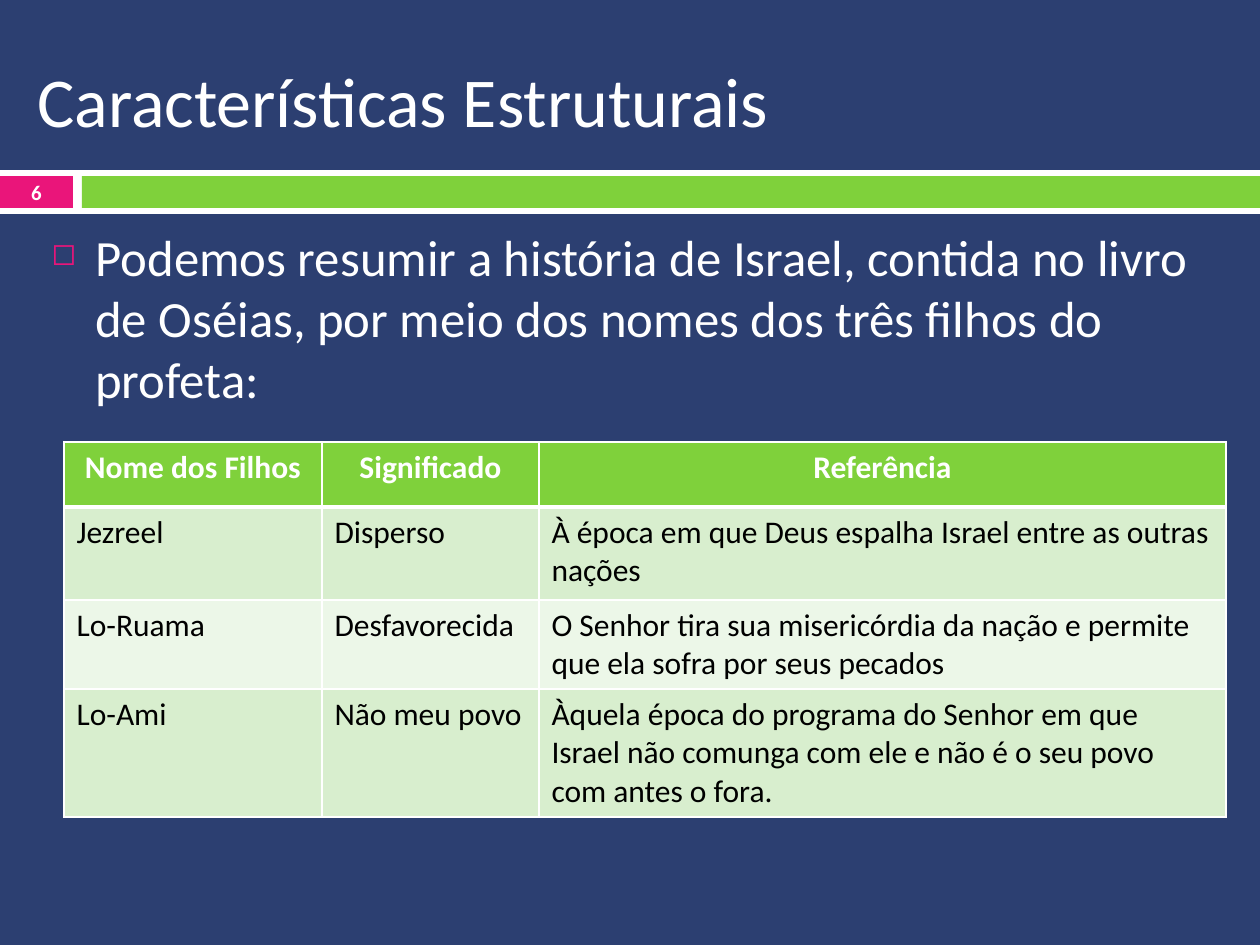
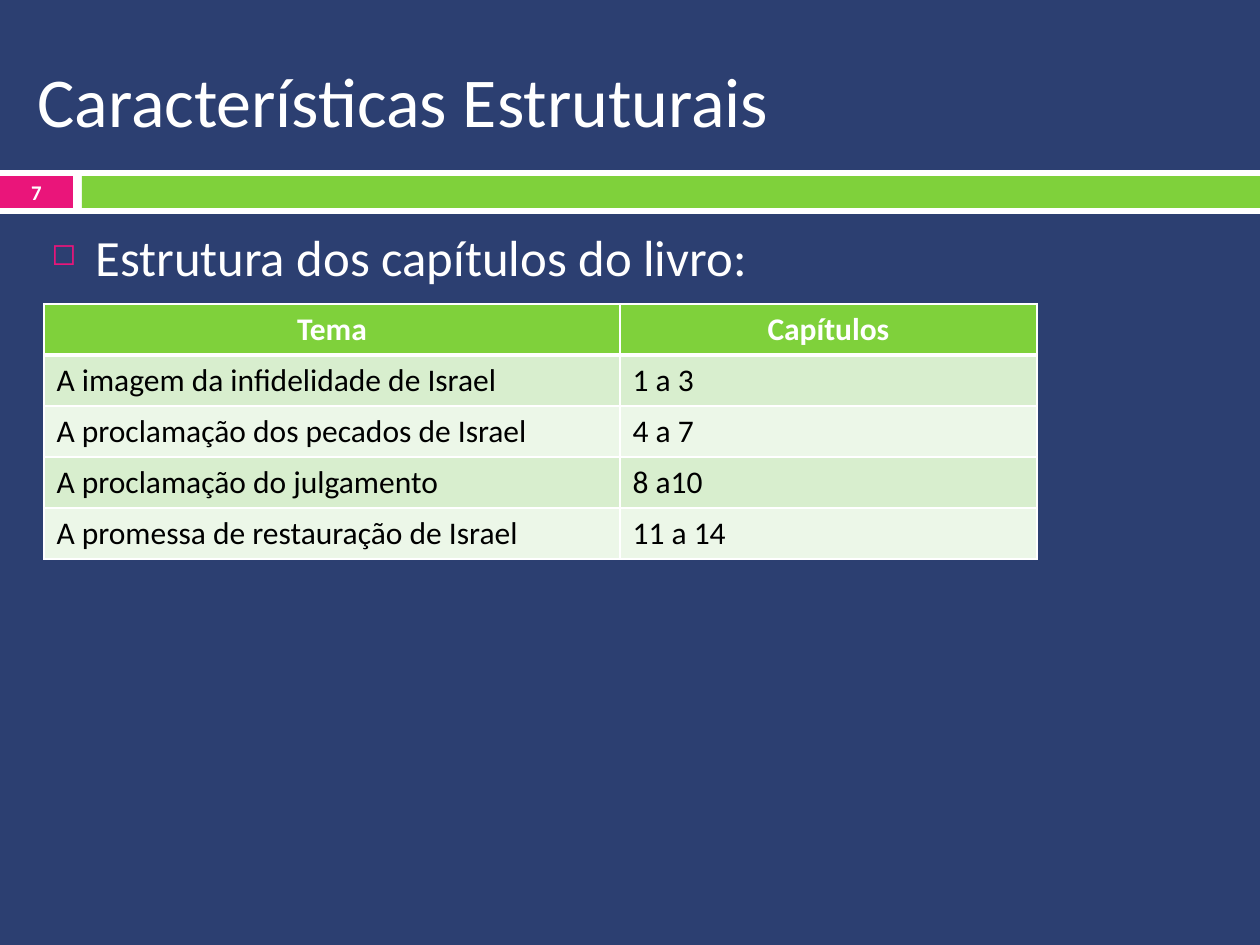
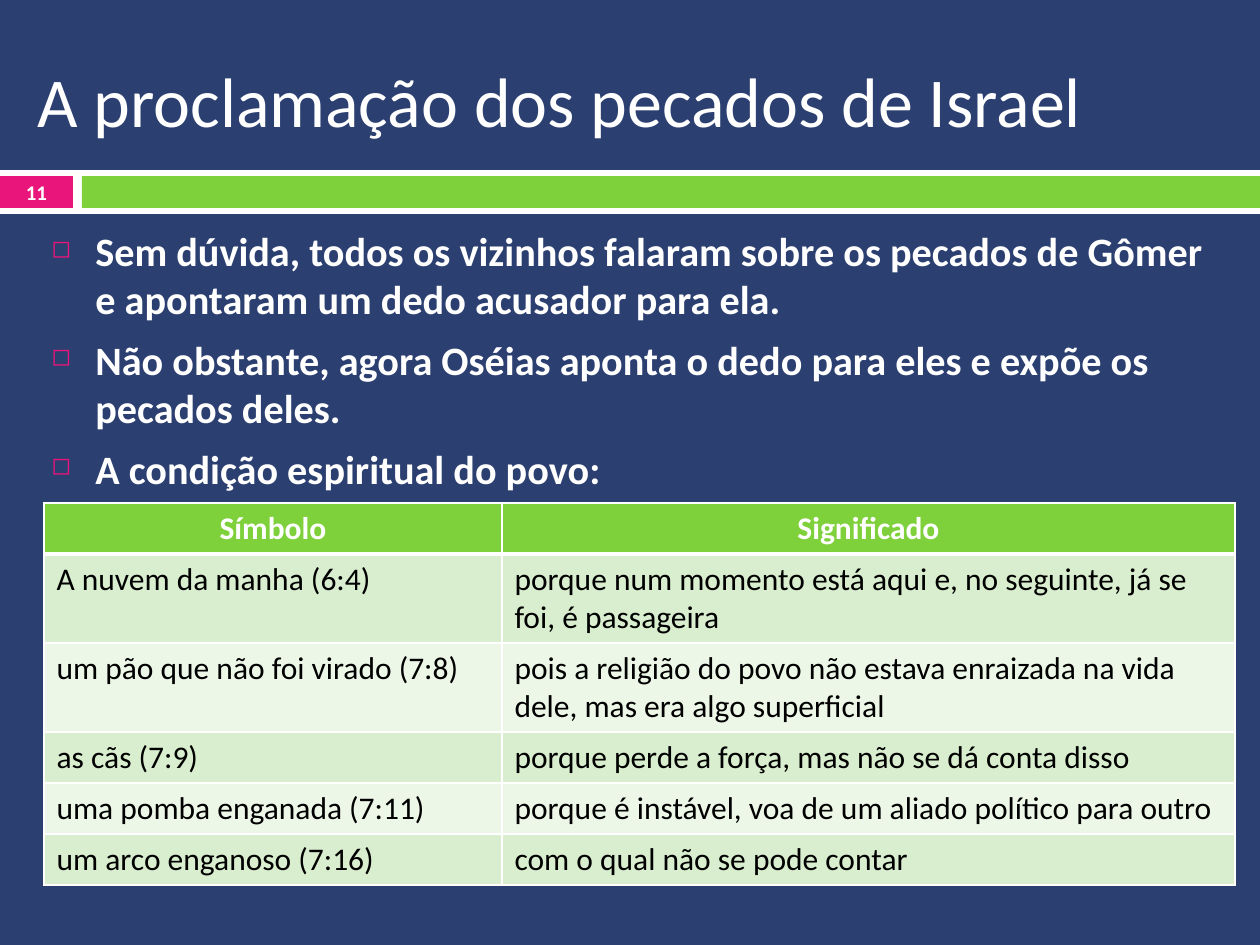
from lxml import etree
from pptx import Presentation
from pptx.dml.color import RGBColor
from pptx.enum.shapes import MSO_SHAPE
from pptx.enum.text import MSO_ANCHOR, PP_ALIGN
from pptx.oxml.ns import qn
from pptx.util import Pt

RECT = MSO_SHAPE.RECTANGLE
MIDDLE = MSO_ANCHOR.MIDDLE
TOP = MSO_ANCHOR.TOP
LEFT = PP_ALIGN.LEFT
CENTER = PP_ALIGN.CENTER

FONT = "Calibri"
COLORS = {
    "navy": "2C3F71",
    "white": "FFFFFF",
    "black": "000000",
    "pink": "EA157A",
    "green": "7FD13B",
    "band_dark": "D8EECE",
    "band_light": "ECF7E8",
}

# Layout, in px at 126 to the inch
EMU_PER_PX = 914400 / 126
SLIDE_W, SLIDE_H = 1260, 945
BAR_TOP, BAR_H = 176, 32
NUMBER_W = 73
INDENT = 44
ROW_H = {1: 51, 2: 89, 3: 128}  # table row height by number of text lines


def px(n):
    return int(n * EMU_PER_PX)


def rgb(name):
    return RGBColor.from_string(COLORS[name])


# Text
def style(p, size, color, bold=False, align=LEFT):
    p.alignment = align
    for r in p.runs:
        r.font.name = FONT
        r.font.size = Pt(size)
        r.font.bold = bold
        r.font.color.rgb = rgb(color)


def add_text(slide, box, text, size, bold=False, align=LEFT, anchor=TOP):
    sp = slide.shapes.add_textbox(*map(px, box))
    tf = sp.text_frame
    tf.word_wrap = True
    tf.vertical_anchor = anchor
    tf.text = text
    for p in tf.paragraphs:
        style(p, size, "white", bold, align)
    return tf


def add_bullet(p):
    p.space_before = Pt(7)
    pPr = p._p.get_or_add_pPr()
    pPr.set("marL", str(px(INDENT)))
    pPr.set("indent", str(-px(INDENT)))
    clr = etree.SubElement(pPr, qn("a:buClr"))
    etree.SubElement(clr, qn("a:srgbClr"), val=COLORS["pink"])
    etree.SubElement(pPr, qn("a:buSzPct"), val="60000")
    etree.SubElement(pPr, qn("a:buChar"), char="◻")


def add_bullets(slide, lines, size, bold=False):
    tf = add_text(slide, (39, 220, 1182, 698), "\n".join(lines), size, bold)
    for p in tf.paragraphs:
        add_bullet(p)


# Slide frame: background, bands, title and number
def add_band(slide, box, color):
    sp = slide.shapes.add_shape(RECT, *map(px, box))
    sp.shadow.inherit = False
    sp.fill.solid()
    sp.fill.fore_color.rgb = rgb(color)
    sp.line.fill.background()


def add_base_slide(prs, title, number):
    slide = prs.slides.add_slide(prs.slide_layouts[6])
    bg = slide.background.fill
    bg.solid()
    bg.fore_color.rgb = rgb("navy")
    add_band(slide, (0, 170, SLIDE_W, 44), "white")
    add_band(slide, (0, BAR_TOP, NUMBER_W, BAR_H), "pink")
    add_band(slide, (82, BAR_TOP, SLIDE_W - 82, BAR_H), "green")
    add_text(slide, (25, 32, 1201, 136), title, 40, anchor=MIDDLE)
    tf = add_text(slide, (0, 175, NUMBER_W, 34), str(number), 11.9,
                  bold=True, align=CENTER, anchor=MIDDLE)
    tf.margin_top = tf.margin_bottom = 0
    return slide


# Tables
def set_borders(cell, top, bottom):
    tcPr = cell._tc.get_or_add_tcPr()
    for side, width in (("L", 1), ("R", 1), ("T", top), ("B", bottom)):
        ln = etree.SubElement(tcPr, qn(f"a:ln{side}"), w=str(Pt(width)))
        fill = etree.SubElement(ln, qn("a:solidFill"))
        etree.SubElement(fill, qn("a:srgbClr"), val=COLORS["white"])


def fill_cell(cell, text, row):
    header = row == 0
    set_borders(cell, 3 if row == 1 else 1, 3 if header else 1)
    band = "green" if header else ("band_light", "band_dark")[row % 2]
    cell.fill.solid()
    cell.fill.fore_color.rgb = rgb(band)
    cell.text_frame.text = text
    for p in cell.text_frame.paragraphs:
        if header:
            style(p, 18, "white", True, CENTER)
        else:
            style(p, 18, "black")


def add_grid(slide, left, top, widths, heights, rows):
    frame = slide.shapes.add_table(len(rows), len(widths), px(left), px(top),
                                   px(sum(widths)), px(sum(heights)))
    table = frame.table
    for col, width in zip(table.columns, widths):
        col.width = px(width)
    for i, (height, texts) in enumerate(zip(heights, rows)):
        table.rows[i].height = px(height)
        for j, text in enumerate(texts):
            fill_cell(table.cell(i, j), text, i)


# Slides
def add_children_slide(prs):
    slide = add_base_slide(prs, "Características Estruturais", 6)
    add_bullets(slide, [
        "Podemos resumir a história de Israel, contida no livro de Oséias, "
        "por meio dos nomes dos três filhos do profeta:"], 29)
    add_grid(slide, 64, 442, (258, 217, 687), (65, 93, ROW_H[2], ROW_H[3]), [
        ("Nome dos Filhos", "Significado", "Referência"),
        ("Jezreel", "Disperso",
         "À época em que Deus espalha Israel entre as outras\nnações"),
        ("Lo-Ruama", "Desfavorecida",
         "O Senhor tira sua misericórdia da nação e permite que ela sofra "
         "por seus pecados"),
        ("Lo-Ami", "Não meu povo",
         "Àquela época do programa do Senhor em que Israel não comunga com "
         "ele e não é o seu povo com antes o fora."),
    ])


def add_chapters_slide(prs):
    slide = add_base_slide(prs, "Características Estruturais", 7)
    add_bullets(slide, ["Estrutura dos capítulos do livro:"], 29)
    add_grid(slide, 44, 304, (576, 417), [ROW_H[1]] * 5, [
        ("Tema", "Capítulos"),
        ("A imagem da infidelidade de Israel", "1 a 3"),
        ("A proclamação dos pecados de Israel", "4 a 7"),
        ("A proclamação do julgamento", "8 a10"),
        ("A promessa de restauração de Israel", "11 a 14"),
    ])


def add_sins_slide(prs):
    slide = add_base_slide(prs, "A proclamação dos pecados de Israel", 11)
    add_bullets(slide, [
        "Sem dúvida, todos os vizinhos falaram sobre os pecados de Gômer e "
        "apontaram um dedo acusador para ela.",
        "Não obstante, agora Oséias aponta o dedo para eles e expõe os "
        "pecados deles.",
        "A condição espiritual do povo:"], 23, bold=True)
    heights = [ROW_H[n] for n in (1, 2, 2, 1, 1, 1)]
    add_grid(slide, 44, 503, (458, 733), heights, [
        ("Símbolo", "Significado"),
        ("A nuvem da manha (6:4)",
         "porque num momento está aqui e, no seguinte, já se foi, "
         "é passageira"),
        ("um pão que não foi virado (7:8)",
         "pois a religião do povo não estava enraizada na vida dele, "
         "mas era algo superficial"),
        ("as cãs (7:9)", "porque perde a força, mas não se dá conta disso"),
        ("uma pomba enganada (7:11)",
         "porque é instável, voa de um aliado político para outro"),
        ("um arco enganoso (7:16)", "com o qual não se pode contar"),
    ])


def main():
    prs = Presentation()
    prs.slide_width, prs.slide_height = px(SLIDE_W), px(SLIDE_H)
    add_children_slide(prs)
    add_chapters_slide(prs)
    add_sins_slide(prs)
    prs.save("out.pptx")


if __name__ == "__main__":
    main()
